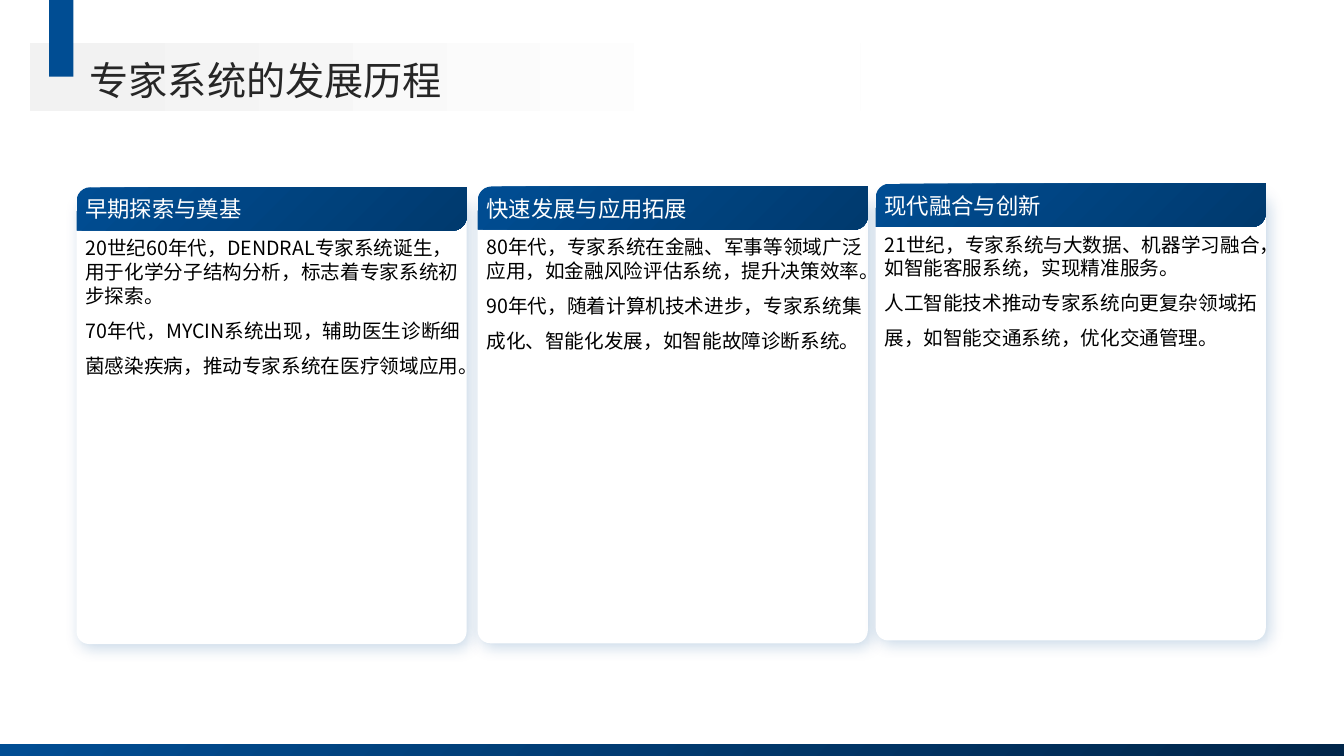
from dataclasses import dataclass
from lxml.etree import SubElement
from pptx import Presentation
from pptx.dml.color import RGBColor
from pptx.enum.shapes import MSO_SHAPE
from pptx.enum.text import MSO_ANCHOR
from pptx.oxml.ns import qn
from pptx.util import Cm, Pt


@dataclass(frozen=True)
class Theme:
    font: str = "Noto Sans CJK SC"
    blue: str = "004D93"
    deep: str = "003A6E"
    navy: str = "00264A"
    gray: str = "F2F2F2"
    white: str = "FFFFFF"
    black: str = "000000"
    ink: str = "262626"
    title: int = 28
    head: int = 16
    body: int = 14


class Deck:
    def __init__(self, theme, slide):
        self.theme = theme
        self.slide = slide

    def shape(self, kind, box, fill, stops=(0, 1), angle=315, adjust=()):
        item = self.slide.shapes.add_shape(kind, *map(Cm, box))
        item.shadow.inherit = False
        item.line.fill.background()
        for i, value in enumerate(adjust):
            item.adjustments[i] = value
        if isinstance(fill, str):
            item.fill.solid()
            item.fill.fore_color.rgb = RGBColor.from_string(fill)
        else:
            item.fill.gradient()
            item.fill.gradient_angle = angle
            for stop, color, place in zip(item.fill.gradient_stops, fill, stops):
                stop.color.rgb = RGBColor.from_string(color)
                stop.position = place
        return item

    def shade(self, item):
        effects = item._element.spPr.find(qn("a:effectLst"))
        outer = SubElement(effects, qn("a:outerShdw"), blurRad=str(Pt(11)),
                           dist=str(Pt(3)), dir="2700000", algn="tl", rotWithShape="0")
        color = SubElement(outer, qn("a:srgbClr"), val=self.theme.blue)
        SubElement(color, qn("a:alpha"), val="21000")

    def text(self, box, lines, size, color, gaps, anchor=MSO_ANCHOR.MIDDLE):
        frame = self.slide.shapes.add_textbox(*map(Cm, box)).text_frame
        frame.word_wrap = True
        frame.vertical_anchor = anchor
        frame.margin_left = frame.margin_right = 0
        frame.margin_top = frame.margin_bottom = 0
        frame.text = "\n".join(lines)
        for para, gap in zip(frame.paragraphs, gaps):
            para.line_spacing = gap
            para.font.size = Pt(size)
            para.font.color.rgb = RGBColor.from_string(color)
            para.font.name = self.theme.font
            SubElement(para.font._element, qn("a:ea"), typeface=self.theme.font)

    def card(self, left, top, head, lines):
        look = self.theme
        panel = self.shape(MSO_SHAPE.ROUNDED_RECTANGLE, (left, top + 0.26, 9.83, 11.25),
                           look.white, adjust=(0.032,))
        self.shade(panel)
        self.shape(MSO_SHAPE.ROUND_2_DIAG_RECTANGLE, (left, top, 9.83, 1.09),
                   (look.blue, look.deep), adjust=(0.319, 0))
        self.text((left + 0.22, top + 0.1, 9.53, 0.89), [head], look.head, look.white, [1.0])
        self.text((left + 0.22, top + 1.22, 9.53, 9.86), lines, look.body, look.black,
                  [Pt(17), Pt(25)], MSO_ANCHOR.TOP)


CARDS = [
    (1.93, 4.72, "早期探索与奠基", [
        "20世纪60年代，DENDRAL专家系统诞生，用于化学分子结构分析，标志着专家系统初步探索。",
        "70年代，MYCIN系统出现，辅助医生诊断细菌感染疾病，推动专家系统在医疗领域应用。"]),
    (12.04, 4.7, "快速发展与应用拓展", [
        "80年代，专家系统在金融、军事等领域广泛应用，如金融风险评估系统，提升决策效率。",
        "90年代，随着计算机技术进步，专家系统集成化、智能化发展，如智能故障诊断系统。"]),
    (22.07, 4.63, "现代融合与创新", [
        "21世纪，专家系统与大数据、机器学习融合，如智能客服系统，实现精准服务。",
        "人工智能技术推动专家系统向更复杂领域拓展，如智能交通系统，优化交通管理。"]),
]


def main():
    show = Presentation()
    show.slide_width = Cm(33.87)
    show.slide_height = Cm(19.05)
    look = Theme()
    deck = Deck(look, show.slides.add_slide(show.slide_layouts[6]))
    deck.shape(MSO_SHAPE.RECTANGLE, (0, 18.76, 33.87, 0.29), (look.blue, look.navy))
    for card in CARDS:
        deck.card(*card)
    deck.shape(MSO_SHAPE.RECTANGLE, (0.76, 1.09, 20.93, 1.7),
               (look.gray, look.white), stops=(0.05, 0.84), angle=0)
    deck.shape(MSO_SHAPE.RECTANGLE, (1.24, 0, 0.61, 1.93), look.blue)
    deck.text((2.26, 1.3, 29.72, 1.3), ["专家系统的发展历程"], look.title, look.ink, [1.1])
    show.save("out.pptx")


if __name__ == "__main__":
    main()
